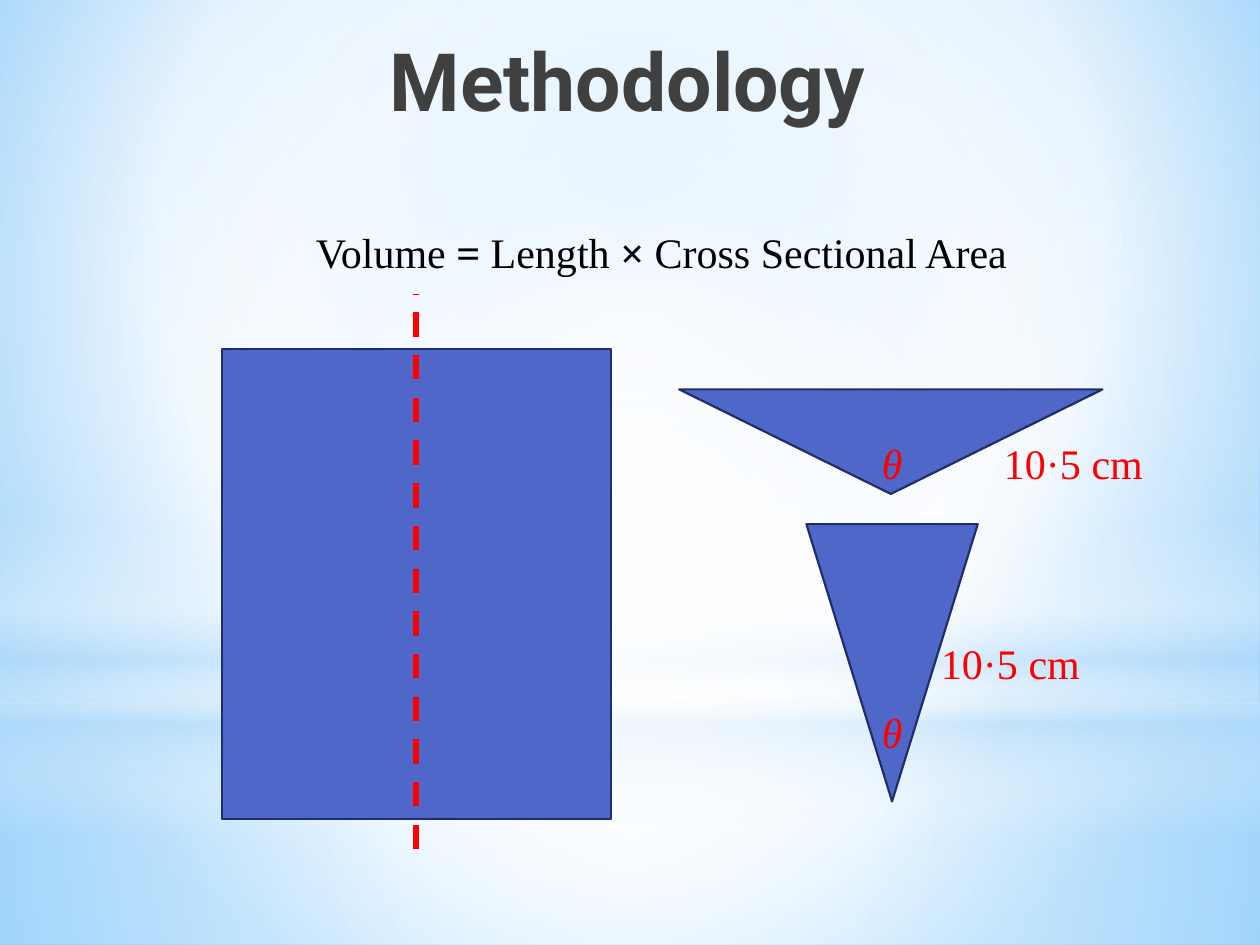
from pptx import Presentation, util as u
from pptx.dml.color import RGBColor
from pptx.enum import dml, shapes, text
from pptx.oxml import parse_xml
from pptx.oxml.ns import nsdecls, qn

PX = 9144  # 100 px to the inch
BLUE = RGBColor(0x4E, 0x67, 0xC8)
NAVY = RGBColor(0x1F, 0x2E, 0x69)
RED = RGBColor(0xFF, 0, 0)
BLACK = RGBColor(0, 0, 0)
GREY = RGBColor(0x40, 0x40, 0x40)
WHITE = RGBColor(0xFF, 0xFF, 0xFF)
SKY = RGBColor(0x9E, 0xD5, 0xFF)
DEEP = RGBColor(0x5B, 0xB9, 0xFF)
PALE = RGBColor(0xB4, 0xDC, 0xFA)
SERIF = "Times New Roman"
MID = (50, 50, 50, 50)
KIND = shapes.MSO_SHAPE


def scale(*sizes):
    return [size * PX for size in sizes]


class Deck:
    def __init__(self, wide, high):
        self.show = Presentation()
        self.show.slide_width, self.show.slide_height = scale(wide, high)
        self.slide = self.show.slides.add_slide(self.show.slide_layouts[6])

    def blend(self, fill, host, stops, focus=None):
        """Fill with (position, colour, opacity) stops, around focus or top to bottom."""
        fill.gradient()
        marks = "".join(
            f'<a:gs pos="{pos * 1000}"><a:srgbClr val="{tone}">'
            f'<a:alpha val="{alpha * 1000}"/></a:srgbClr></a:gs>'
            for pos, tone, alpha in stops)
        if focus:
            rect = " ".join(f'{side}="{part * 1000}"' for side, part in zip("ltrb", focus))
            way = f'<a:path path="circle"><a:fillToRect {rect}/></a:path>'
        else:
            way = '<a:lin ang="5400000" scaled="0"/>'
        old = host.find(".//" + qn("a:gradFill"))
        old.getparent().replace(old, parse_xml(
            f'<a:gradFill {nsdecls("a")} rotWithShape="1">'
            f'<a:gsLst>{marks}</a:gsLst>{way}</a:gradFill>'))

    def back(self, stops, focus):
        self.blend(self.slide.background.fill, self.slide.element, stops, focus)

    def shape(self, kind, box):
        item = self.slide.shapes.add_shape(kind, *scale(*box))
        item.shadow.inherit = False
        return item

    def glow(self, kind, box, stops, focus=None):
        item = self.shape(kind, box)
        item.line.fill.background()
        self.blend(item.fill, item.element, stops, focus)

    def solid(self, kind, box):
        item = self.shape(kind, box)
        item.fill.solid()
        item.fill.fore_color.rgb = BLUE
        item.line.color.rgb = NAVY
        item.line.width = u.Pt(1.25)
        return item

    def wedge(self, box):
        """Triangle that points down."""
        item = self.solid(KIND.ISOSCELES_TRIANGLE, box)
        item.rotation = 180
        item.adjustments[0] = 0.5

    def dash(self, *ends):
        item = self.slide.shapes.add_connector(shapes.MSO_CONNECTOR.STRAIGHT, *scale(*ends))
        item.line.color.rgb = RED
        item.line.width = u.Pt(3.5)
        item.line.dash_style = dml.MSO_LINE.DASH
        item.element.spPr.append(parse_xml(f'<a:effectLst {nsdecls("a")}/>'))

    def label(self, box, parts, tone=RED, size=24, font=SERIF, bold=(), slant=False,
              wrap=True, align=text.PP_ALIGN.LEFT):
        """Write the parts as runs; those listed in bold are bold."""
        frame = self.slide.shapes.add_textbox(*scale(*box)).text_frame
        frame.word_wrap = wrap
        line = frame.paragraphs[0]
        line.alignment = align
        for part in parts:
            run = line.add_run()
            run.text = part
            run.font.name, run.font.size = font, u.Pt(size)
            run.font.bold, run.font.italic = part in bold, slant
            run.font.color.rgb = tone


def main():
    deck = Deck(1000, 750)
    deck.back([(0, SKY, 100), (60, WHITE, 100), (100, DEEP, 100)], (20, 10, 20, 60))
    deck.glow(KIND.RECTANGLE, (0, 558, 1000, 192),
              [(0, WHITE, 91), (37, WHITE, 76), (100, PALE, 79)], MID)
    deck.glow(KIND.RECTANGLE, (0, 0, 1000, 558),
              [(0, WHITE, 89), (48, WHITE, 62), (100, PALE, 79)], MID)
    deck.glow(KIND.RECTANGLE, (0, 412, 1000, 250),
              [(0, WHITE, 0), (29, WHITE, 30), (45, PALE, 40),
               (55, WHITE, 26), (65, PALE, 60), (100, WHITE, 0)])
    deck.glow(KIND.OVAL, (0, 175, 1000, 558), [(0, WHITE, 100), (56, WHITE, 0)], MID)

    deck.label((142, 20, 712, 125), ["Methodology"], GREY, 46, "Roboto",
               bold=["Methodology"], align=text.PP_ALIGN.CENTER)
    deck.wedge((539, 309, 336, 83))
    deck.solid(KIND.RECTANGLE, (176, 277, 309, 373))
    deck.wedge((640, 416, 136, 220))
    deck.dash(330, 674, 330, 233)

    for top in (342, 556):
        deck.label((690, top, 47, 50), ["θ"], slant=True)
    for left, top in ((737, 501), (787, 342)):
        deck.label((left, top, 154, 50), ["10·5 cm"])
    deck.label((241, 175, 573, 50), ["Volume ", "=", " Length ", "×", " Cross Sectional Area"],
               BLACK, bold=["=", "×"], wrap=False)
    deck.show.save("out.pptx")


if __name__ == "__main__":
    main()
